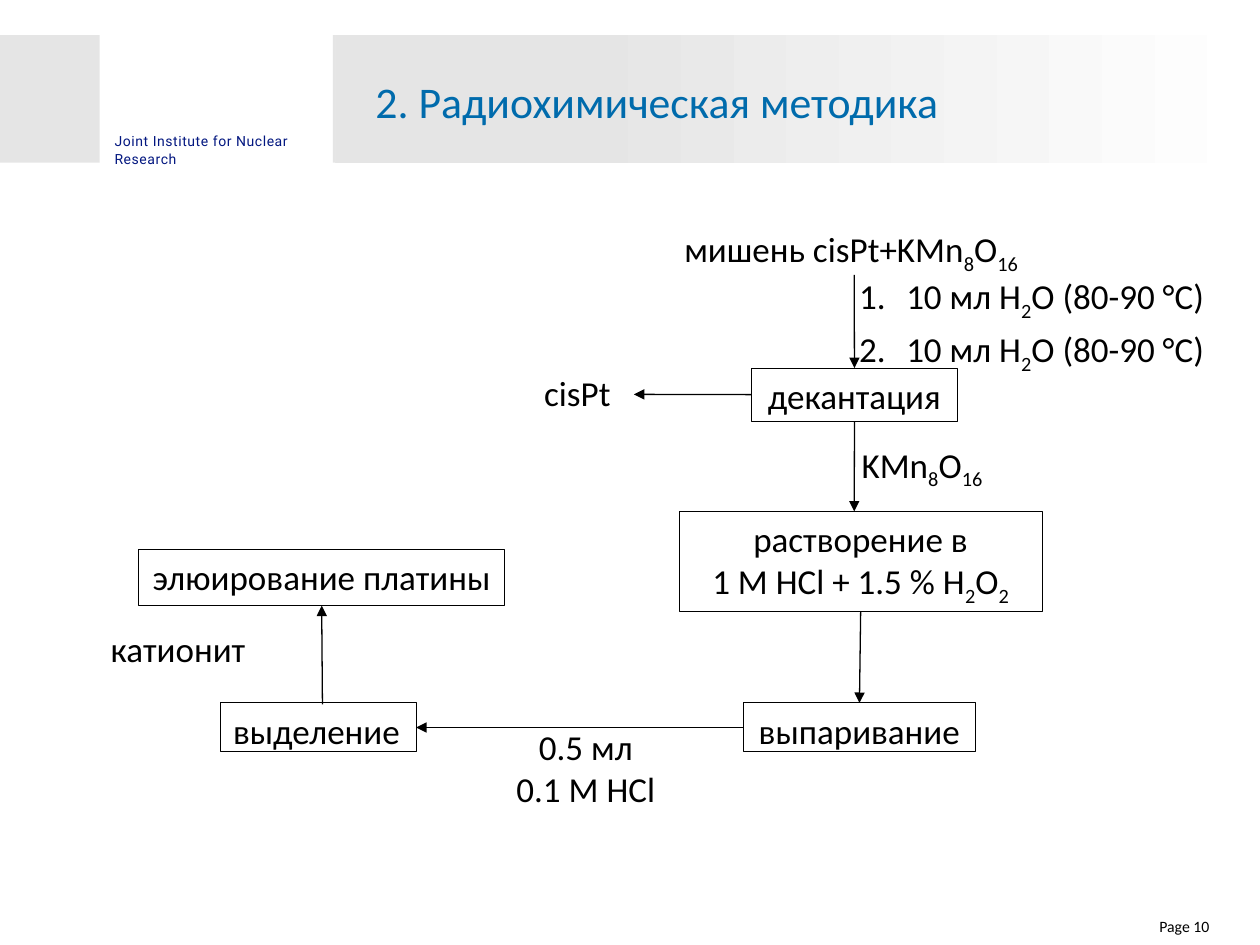
from dataclasses import dataclass

from lxml import etree
from pptx import Presentation
from pptx import util as u
from pptx.dml.color import RGBColor
from pptx.enum import shapes, text
from pptx.oxml.ns import qn

TOP, LEFT, BOTTOM = 0, 1, 2  # connection sites of a rectangle
CENTER, RIGHT = text.PP_ALIGN.CENTER, text.PP_ALIGN.RIGHT


@dataclass(frozen=True)
class Theme:
    font: str = "Calibri"
    label_font: str = "Roboto"
    ink: str = "000000"
    paper: str = "FFFFFF"
    band: str = "E5E5E5"
    title: str = "006BAC"
    label: str = "031780"
    title_size: float = 25
    body_size: float = 20
    page_size: float = 9
    label_size: float = 8
    box_line: float = 0.5
    arrow_line: float = 0.75


THEME = Theme()


def rgb(value):
    return RGBColor.from_string(value)


def write(tf, lines, size=THEME.body_size, font=THEME.font, color=THEME.ink,
          align=None, numbered=False, gap=0, leading=None, tracking=None):
    """Write one paragraph per line; parts between underscores are subscripts."""
    for i, line in enumerate(lines):
        p = tf.paragraphs[0] if i == 0 else tf.add_paragraph()
        if numbered:
            pPr = p._p.get_or_add_pPr()
            pPr.set("marL", str(u.Cm(0.95)))
            pPr.set("indent", str(u.Cm(-0.95)))
            etree.SubElement(pPr, qn("a:buFont"), typeface="+mj-lt")
            etree.SubElement(pPr, qn("a:buAutoNum"), type="arabicPeriod")
        p.alignment = align
        if i and gap:
            p.space_before = u.Pt(gap)
        if leading:
            p.line_spacing = leading
        for j, part in enumerate(line.split("_")):
            if not part:
                continue
            r = p.add_run()
            r.text = part
            r.font.size = u.Pt(size)
            r.font.name = font
            r.font.color.rgb = rgb(color)
            if j % 2:
                r._r.get_or_add_rPr().set("baseline", "-25000")
            if tracking:
                r._r.get_or_add_rPr().set("spc", str(int(tracking * 100)))


class Deck:
    def __init__(self, theme):
        self.theme = theme
        self.prs = Presentation()
        self.prs.slide_width, self.prs.slide_height = u.Cm(25.4), u.Cm(19.05)
        self.s = self.prs.slides.add_slide(self.prs.slide_layouts[6])

    def rect(self, x, y, w, h):
        sp = self.s.shapes.add_shape(shapes.MSO_SHAPE.RECTANGLE,
                                     u.Cm(x), u.Cm(y), u.Cm(w), u.Cm(h))
        sp.shadow.inherit = False
        return sp

    def band(self, x, w, fade=False):
        sp = self.rect(x, 0.71, w, 2.57)
        sp.line.fill.background()
        if fade:
            sp.fill.gradient()
            sp.fill.gradient_angle = 180
            stops = zip(sp.fill.gradient_stops, (0, 0.74),
                        (self.theme.paper, self.theme.band))
            for stop, position, color in stops:
                stop.position = position
                stop.color.rgb = rgb(color)
        else:
            sp.fill.solid()
            sp.fill.fore_color.rgb = rgb(self.theme.band)

    def box(self, x, y, w, h, *lines, align=CENTER):
        sp = self.rect(x, y, w, h)
        sp.fill.solid()
        sp.fill.fore_color.rgb = rgb(self.theme.paper)
        sp.line.color.rgb = rgb(self.theme.ink)
        sp.line.width = u.Pt(self.theme.box_line)
        sp.text_frame.word_wrap = True
        sp.text_frame.vertical_anchor = text.MSO_ANCHOR.TOP
        write(sp.text_frame, lines, align=align)
        return sp

    def label(self, x, y, w, h, *lines, inset=True,
              anchor=text.MSO_ANCHOR.TOP, **fmt):
        tf = self.s.shapes.add_textbox(u.Cm(x), u.Cm(y), u.Cm(w), u.Cm(h)).text_frame
        tf.word_wrap = True
        tf.vertical_anchor = anchor
        if not inset:
            tf.margin_left = tf.margin_right = tf.margin_top = tf.margin_bottom = 0
        write(tf, lines, **fmt)

    def arrow(self, x1, y1, x2, y2, begin=None, end=None):
        c = self.s.shapes.add_connector(shapes.MSO_CONNECTOR.STRAIGHT,
                                        u.Cm(x1), u.Cm(y1), u.Cm(x2), u.Cm(y2))
        if begin:
            c.begin_connect(*begin)
        if end:
            c.end_connect(*end)
        c.line.color.rgb = rgb(self.theme.ink)
        c.line.width = u.Pt(self.theme.arrow_line)
        etree.SubElement(c.line._get_or_add_ln(), qn("a:tailEnd"), type="triangle")
        etree.SubElement(c._element.spPr, qn("a:effectLst"))


def main():
    deck = Deck(THEME)

    # Header
    deck.band(0, 2.01)
    deck.band(6.71, 18.69)
    deck.label(2.31, 2.64, 4.2, 0.9, "Joint Institute for Nuclear", "Research",
               inset=False, size=THEME.label_size, font=THEME.label_font,
               color=THEME.label, leading=1.1, tracking=0.3)
    deck.band(6.76, 18.64, fade=True)
    deck.label(7.32, 1.32, 16.92, 1.42, "2. Радиохимическая методика",
               anchor=text.MSO_ANCHOR.MIDDLE, size=THEME.title_size,
               color=THEME.title)

    # Process steps
    decant = deck.box(15.14, 7.42, 4.17, 1.07, "декантация")
    dissolve = deck.box(13.69, 10.31, 7.32, 2.01,
                        "растворение в", "1 М HCl + 1.5 % H_2_O_2_")
    evaporate = deck.box(14.99, 14.17, 4.67, 0.99, "выпаривание")
    separate = deck.box(4.45, 14.17, 3.94, 0.99, "выделение", align=None)
    elute = deck.box(2.79, 11.07, 7.39, 1.14, "элюирование платины")

    # Flow arrows
    deck.arrow(17.22, 5.54, 17.22, 7.42, end=(decant, TOP))
    deck.arrow(15.14, 7.95, 12.78, 7.95, begin=(decant, LEFT))
    deck.arrow(17.22, 8.49, 17.22, 10.31, begin=(decant, BOTTOM))
    deck.arrow(17.33, 12.32, 17.33, 14.17,
               begin=(dissolve, BOTTOM), end=(evaporate, TOP))
    deck.arrow(14.99, 14.67, 8.39, 14.67,
               begin=(evaporate, LEFT), end=(separate, 3))
    deck.arrow(6.5, 14.2, 6.5, 12.21, end=(elute, BOTTOM))

    # Reagents and products
    deck.label(13.49, 4.47, 7.34, 1.24, "мишень cisPt+KMn_8_O_16_", align=CENTER)
    deck.label(17.07, 5.41, 7.54, 1.73, *["10 мл H_2_O (80-90 °С)"] * 2,
               numbered=True, gap=3)
    deck.label(10.72, 7.37, 1.91, 1.14, "cisPt")
    deck.label(17.12, 8.81, 3.05, 1.12, "KMn_8_O_16_")
    deck.label(10.11, 14.5, 3.4, 1.96, "0.5 мл", "0.1 M HCl", align=CENTER)
    deck.label(1.98, 12.52, 4.72, 0.94, "катионит")

    # Footer
    deck.label(22.78, 18.49, 1.6, 0.56, "Page 10", inset=False,
               size=THEME.page_size, align=RIGHT)

    deck.prs.save("out.pptx")


if __name__ == "__main__":
    main()
